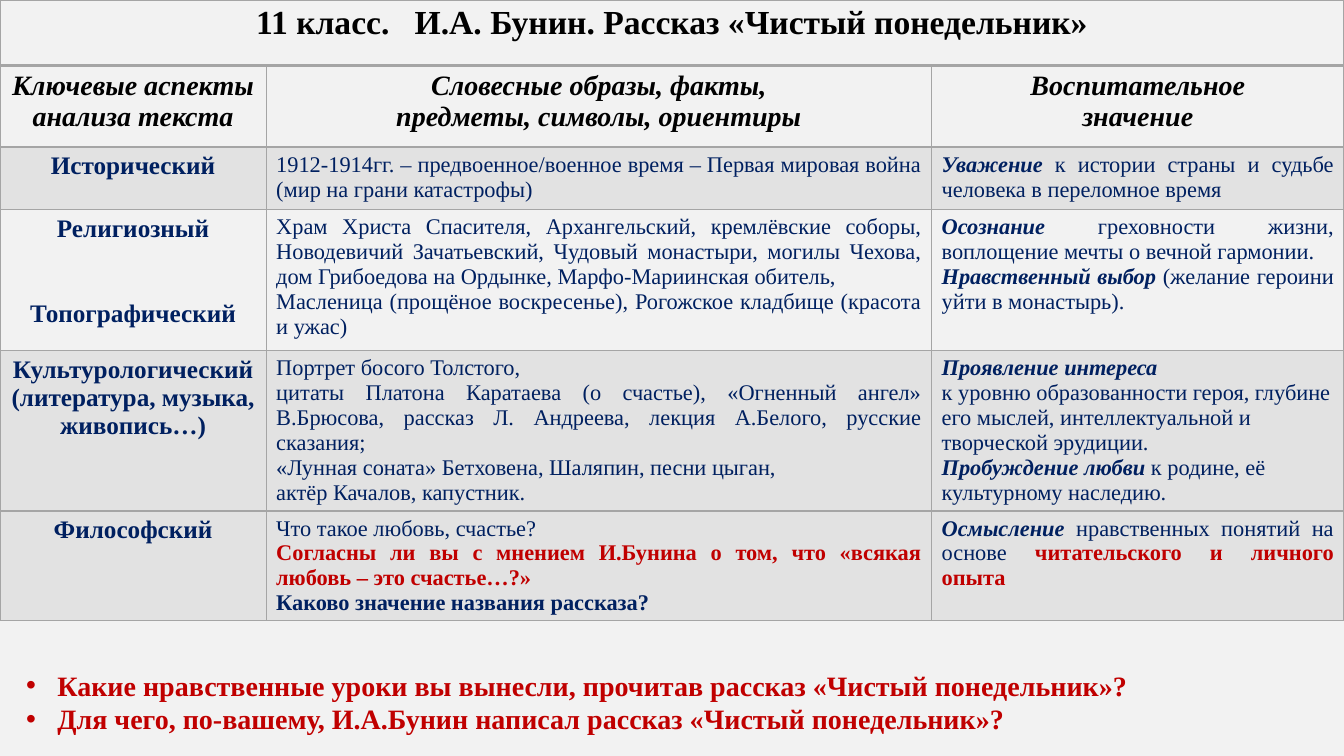
"""Build the lesson slide: a table of text analysis aspects and two closing questions."""
from lxml import etree
from pptx import Presentation
from pptx.dml.color import RGBColor
from pptx.enum import text
from pptx.oxml import ns
from pptx import util as u

NAVY, RED, BLACK, GREY, PAPER = "002060", "C00000", "000000", "A5A5A5", "F2F2F2"
FONT = "Times New Roman"
CENTER, JUSTIFY, LEFT = text.PP_ALIGN.CENTER, text.PP_ALIGN.JUSTIFY, text.PP_ALIGN.LEFT
COLUMNS = [2.64, 6.6, 4.09]
HEIGHTS = [0.65, 0.81, 0.62, 1.4, 1.59, 1.08]
SHADED_ROWS = {2, 4, 5}
HEAVY_EDGES = {1, 2}
# Spans are parted by "|"; a leading mark sets the style.
MARKS = {"*": (True, True, NAVY), "#": (True, False, RED), "^": (True, False, NAVY)}

ROWS = [
    [["11 класс.   И.А. Бунин. Рассказ «Чистый понедельник»"], [], []],
    [["Ключевые аспекты анализа текста"],
     ["Словесные образы, факты,", "предметы, символы, ориентиры"],
     ["Воспитательное", "значение"]],
    [["Исторический"],
     ["1912-1914гг. – предвоенное/военное время – Первая мировая война "
      "(мир на грани катастрофы)"],
     ["*Уважение| к истории страны и судьбе человека в переломное время"]],
    [["Религиозный", "Топографический"],
     ["Храм Христа Спасителя, Архангельский, кремлёвские соборы, Новодевичий "
      "Зачатьевский, Чудовый монастыри, могилы Чехова, дом Грибоедова на Ордынке, "
      "Марфо-Мариинская обитель,",
      "Масленица (прощёное воскресенье), Рогожское кладбище (красота и ужас)"],
     ["*Осознание| греховности жизни, воплощение мечты о вечной гармонии.",
      "*Нравственный выбор |(желание героини уйти в монастырь)."]],
    [["Культурологический (литература, музыка, живопись…)"],
     ["Портрет босого Толстого,",
      "цитаты Платона Каратаева (о счастье), «Огненный ангел» В.Брюсова, "
      "рассказ Л. Андреева, лекция А.Белого, русские сказания;",
      "«Лунная соната» Бетховена, Шаляпин, песни цыган,",
      "актёр Качалов, капустник."],
     ["*Проявление интереса",
      "к уровню образованности героя, глубине его мыслей, интеллектуальной "
      "и творческой эрудиции.",
      "*Пробуждение любви |к родине, её культурному наследию."]],
    [["Философский"],
     ["Что такое любовь, счастье?",
      "#Согласны ли вы с мнением И.Бунина о том, что «всякая любовь – это счастье…?»",
      "^Каково значение названия рассказа?"],
     ["*Осмысление| нравственных понятий на основе |#читательского и личного опыта"]],
]
QUESTIONS = [
    "Какие нравственные уроки вы вынесли, прочитав рассказ «Чистый понедельник»?",
    "Для чего, по-вашему, И.А.Бунин написал рассказ «Чистый понедельник»?",
]


def style(font, size, color, bold, italic=False):
    font.name, font.size, font.bold, font.italic = FONT, u.Pt(size), bold, italic
    font.color.rgb = RGBColor.from_string(color)


def add_child(parent, tag, **attributes):
    return etree.SubElement(parent, ns.qn(tag), attributes)


deck = Presentation()
deck.slide_width, deck.slide_height = u.Inches(13.33), u.Inches(7.5)
page = deck.slides.add_slide(deck.slide_layouts[6])
page.background.fill.solid()
page.background.fill.fore_color.rgb = RGBColor.from_string(PAPER)

table = page.shapes.add_table(len(ROWS), len(COLUMNS), 0, 0, deck.slide_width,
                              u.Inches(sum(HEIGHTS))).table
table.first_row = table.horz_banding = False
for column, width in zip(table.columns, COLUMNS):
    column.width = u.Inches(width)
for row, height in zip(table.rows, HEIGHTS):
    row.height = u.Inches(height)
table.cell(0, 0).merge(table.cell(0, len(COLUMNS) - 1))

for r, row in enumerate(ROWS):
    for c, lines in enumerate(row):
        cell = table.cell(r, c)
        properties = cell._tc.get_or_add_tcPr()
        for side, edge in (("L", 0), ("R", 0), ("T", r), ("B", r + 1)):
            width = u.Pt(1.98 if edge in HEAVY_EDGES else 0.96)
            line = add_child(properties, f"a:ln{side}", w=str(int(width)))
            add_child(add_child(line, "a:solidFill"), "a:srgbClr", val=GREY)
        if r in SHADED_ROWS:
            cell.fill.solid()
            cell.fill.fore_color.rgb = RGBColor.from_string(GREY)
            tint = properties.find(ns.qn("a:solidFill")).find(ns.qn("a:srgbClr"))
            add_child(tint, "a:alpha", val="20000")
        else:
            cell.fill.background()

        heading = r < 2 or c == 0
        size = {0: 24, 1: 20}.get(r, 18 if heading else 16)
        base = (heading, r == 1, BLACK if r < 2 else NAVY)
        for n, line in enumerate(lines):
            para = cell.text_frame.add_paragraph() if n else cell.text_frame.paragraphs[0]
            para.alignment = CENTER if heading else LEFT if (r, c) == (4, 2) else JUSTIFY
            if n and c == 0:
                para.space_before = u.Pt(41)
            for part in line.split("|"):
                bold, italic, color = MARKS.get(part[0], base)
                span = para.add_run()
                span.text = part[1:] if part[0] in MARKS else part
                style(span.font, size, color, bold, italic)

box = page.shapes.add_textbox(u.Inches(0.16), u.Inches(6.58), u.Inches(13.01), u.Inches(0.77))
box.text_frame.word_wrap = True
box.text_frame.auto_size = text.MSO_AUTO_SIZE.SHAPE_TO_FIT_TEXT
for n, question in enumerate(QUESTIONS):
    para = box.text_frame.add_paragraph() if n else box.text_frame.paragraphs[0]
    para.text = question
    style(para.font, 20, RED, True)
    indent = para._p.get_or_add_pPr()
    indent.set("marL", str(int(u.Inches(0.31))))
    indent.set("indent", str(-int(u.Inches(0.31))))
    bullet_font = etree.Element(ns.qn("a:buFont"), typeface="Arial")
    bullet = etree.Element(ns.qn("a:buChar"), char="•")
    indent.insert(0, bullet_font)
    indent.insert(1, bullet)

deck.save("out.pptx")
